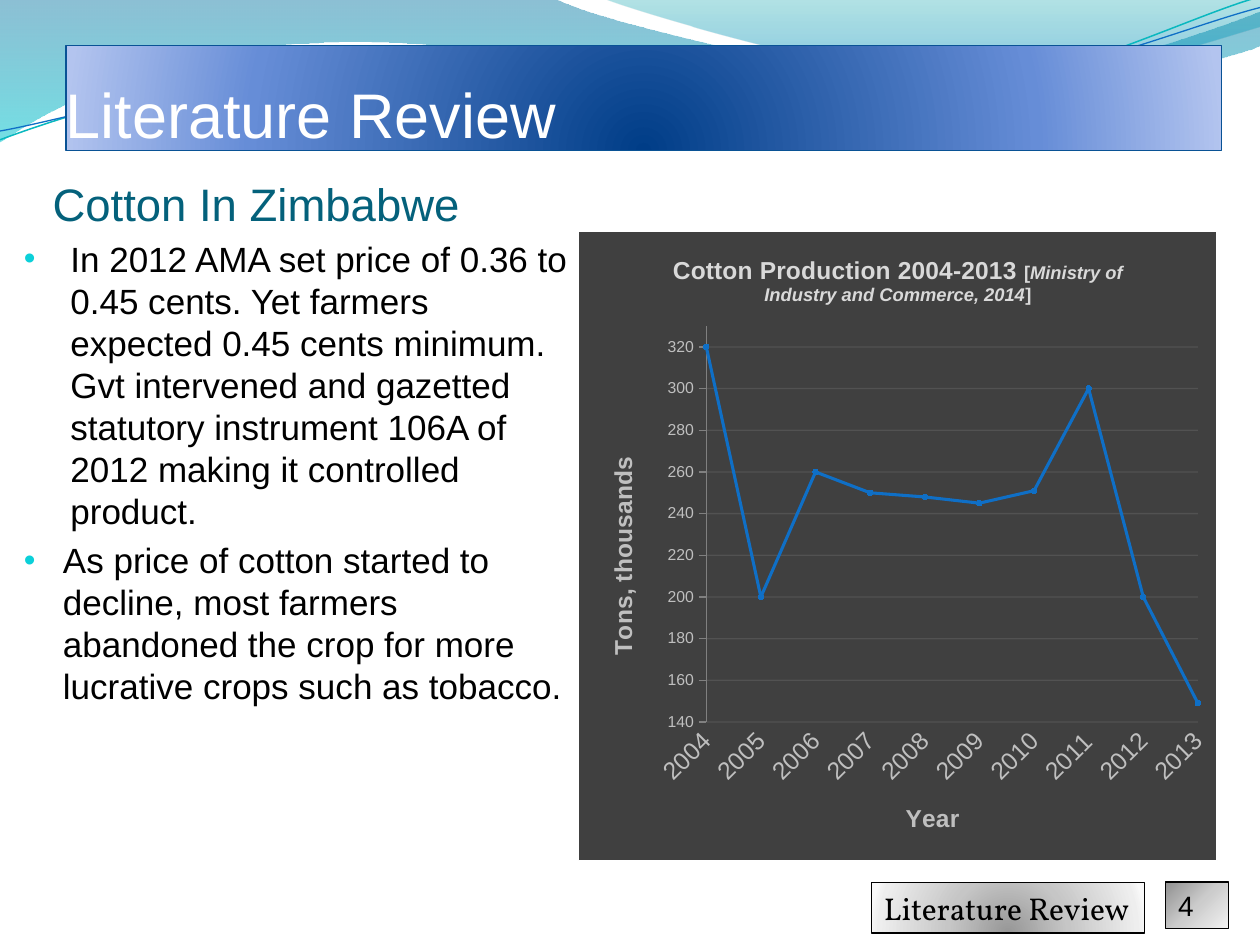
"""Build the Literature Review slide on cotton production in Zimbabwe."""
from lxml.etree import SubElement
from pptx import Presentation
from pptx.chart.data import XyChartData
from pptx.dml.color import RGBColor
from pptx.enum.chart import XL_CHART_TYPE as ChartKind, XL_MARKER_STYLE as Marker, XL_TICK_MARK as Tick
from pptx.enum.shapes import MSO_SHAPE as Preset
from pptx.enum.text import MSO_ANCHOR as Anchor, MSO_AUTO_SIZE as Fit, PP_ALIGN as Align
from pptx.oxml import parse_xml
from pptx.oxml.ns import nsdecls, qn
from pptx.util import Cm, Pt

COLOURS = {
    "black": "000000", "white": "FFFFFF", "heading": "04617B", "bullet": "0BD0D9",
    "banner edge": "095295", "blue": "0F6FC6", "teal": "0AB8BF", "marker": "59AAF2",
    "panel": "404040", "panel title": "D9D9D9", "label": "BFBFBF", "axis": "808080", "grid": "595959",
}
RGB = {name: RGBColor.from_string(value) for name, value in COLOURS.items()}


def style(font, colour, **values):
    font.color.rgb = RGB[colour]
    for name, value in {"name": "Arial", **values}.items():
        setattr(font, name, value)


def shade(shape, stops, focus=None):
    shape.fill.gradient()
    gradient = shape._element.spPr.find(qn("a:gradFill"))
    for child in list(gradient):
        gradient.remove(child)
    stop_list = SubElement(gradient, qn("a:gsLst"))
    for position, colour, alpha in stops:
        stop = SubElement(stop_list, qn("a:gs"), pos=str(position * 1000))
        tint = SubElement(stop, qn("a:srgbClr"), val=colour)
        if alpha < 100:
            SubElement(tint, qn("a:alpha"), val=str(alpha * 1000))
    if focus:
        radial = SubElement(gradient, qn("a:path"), path="circle")
        SubElement(radial, qn("a:fillToRect"), {side: str(share * 1000) for side, share in zip("ltrb", focus)})
    else:
        SubElement(gradient, qn("a:lin"), ang="5400000", scaled="0")


deck = Presentation()
deck.slide_width, deck.slide_height = Cm(25.4), Cm(19.05)
slide = deck.slides.add_slide(deck.slide_layouts[6])

waves = [
    ([(0, 0), (440, -1), (476, 17, 664, 63, 758, 63), (853, 63, 958, 26, 1000, 9),
      (1001, 36), (983, 44, 870, 76, 746, 75), (622, 75, 382, 28, 257, 34),
      (129, 36, 46, 83, -1, 113)], [(0, "0074A1", 45), (100, "00C6CF", 55)], None, 0),
    ([(479, -1), (509, 11, 682, 62, 769, 65), (856, 69, 961, 32, 1000, 21),
      (1000, 0)], [(0, "00A1A9", 30), (80, "008BBF", 45)], None, 0),
    ([(0, 111), (48, 93, 158, 57, 277, 52), (395, 47, 593, 89, 713, 80),
      (833, 71, 938, 15, 998, -2)], None, "teal", 0.85),
    ([(0, 104), (47, 96, 164, 61, 283, 56), (403, 51, 597, 84, 717, 75),
      (836, 67, 941, 21, 1000, 6)], None, "blue", 0.75),
]
for outline, stops, line_colour, weight in waves:
    anchors = [segment[-2:] for segment in outline]
    left, top = map(min, zip(*anchors))
    builder = slide.shapes.build_freeform(*anchors[0], scale=Cm(2.54) / 100)
    builder.add_line_segments(anchors[1:], close=bool(stops))
    wave = builder.convert_to_shape()
    wave.shadow.inherit = False
    for segment, straight in zip(outline[1:], list(wave._element.iter(qn("a:lnTo")))):
        if len(segment) == 6:
            curve = parse_xml(f'<a:cubicBezTo {nsdecls("a")}/>')
            for x, y in zip(segment[::2], segment[1::2]):
                SubElement(curve, qn("a:pt"), x=str(x - left), y=str(y - top))
            straight.getparent().replace(straight, curve)
    if stops:
        shade(wave, stops)
        wave.line.fill.background()
    else:
        wave.fill.background()
        wave.line.color.rgb = RGB[line_colour]
        wave.line.width = Pt(weight)

heading = slide.shapes.add_textbox(Cm(1.06), Cm(1.42), Cm(9.32), Cm(3.23)).text_frame
heading_format = {"word_wrap": True, "vertical_anchor": Anchor.BOTTOM, "margin_left": 0,
                  "margin_right": 0, "margin_bottom": 0}
for name, value in heading_format.items():
    setattr(heading, name, value)
heading_run = heading.paragraphs[0].add_run()
heading_run.text = "Cotton In Zimbabwe"
style(heading_run.font, "heading", size=Pt(26))

findings = slide.shapes.add_textbox(Cm(0.43), Cm(4.66), Cm(11.23), Cm(12.7)).text_frame
for name, value in {"word_wrap": True, "margin_left": Cm(0.05), "margin_right": Cm(0.05)}.items():
    setattr(findings, name, value)
statements = [
    ("In 2012 AMA set price of 0.36 to 0.45 cents. Yet farmers expected 0.45 cents minimum. Gvt intervened "
     "and gazetted statutory instrument 106A of 2012 making it controlled product.", Cm(0.94)),
    ("As price of cotton started to decline, most farmers abandoned the crop for more lucrative crops "
     "such as tobacco.", Cm(0.79)),
]
for index, (statement, indent) in enumerate(statements):
    finding = findings.add_paragraph() if index else findings.paragraphs[0]
    finding.line_spacing, finding.space_before = Pt(24), Pt(4)
    finding_run = finding.add_run()
    finding_run.text = statement
    style(finding_run.font, "black", size=Pt(20))
    properties = finding._p.get_or_add_pPr()
    properties.set("marL", str(indent))
    properties.set("indent", str(-indent))
    SubElement(SubElement(properties, qn("a:buClr")), qn("a:srgbClr"), val=COLOURS["bullet"])
    SubElement(properties, qn("a:buSzPct"), val="95000")
    SubElement(properties, qn("a:buFont"), typeface="Arial")
    SubElement(properties, qn("a:buChar"), char="•")

production = XyChartData()
tons = production.add_series("Series 1")
for year, amount in enumerate([320, 200, 260, 250, 248, 245, 251, 300, 200, 149], 2004):
    tons.add_data_point(year, amount)
chart = slide.shapes.add_chart(ChartKind.XY_SCATTER_LINES, Cm(11.65), Cm(4.66), Cm(12.9), Cm(12.7), production).chart
chart.has_legend = False
style(chart.font, "black", name="Vollkorn", size=Pt(10))
chart._chartSpace.find(qn("c:chart")).addnext(parse_xml(
    f'<c:spPr {nsdecls("c", "a")}><a:solidFill><a:srgbClr val="{COLOURS["panel"]}"/></a:solidFill>'
    f'<a:ln w="9525"><a:solidFill><a:srgbClr val="{COLOURS["white"]}"/></a:solidFill></a:ln></c:spPr>'))

chart.has_title = True
chart.chart_title.include_in_layout = False
caption = chart.chart_title.text_frame.paragraphs[0]
for words, size, slanted in [("Cotton Production 2004-2013 ", 14, False), ("[", 10.5, False),
                             ("Ministry of Industry and Commerce, 2014", 10.5, True), ("]", 10.5, False)]:
    caption_run = caption.add_run()
    caption_run.text = words
    style(caption_run.font, "panel title", size=Pt(size), bold=True, italic=slanted)

years, amounts = chart.category_axis, chart.value_axis
axes = [
    (years, "Year", 14, {"minimum_scale": 2004, "maximum_scale": 2013, "major_unit": 1,
                         "major_tick_mark": Tick.NONE, "has_major_gridlines": False}),
    (amounts, "Tons, thousands", 9, {"minimum_scale": 140, "maximum_scale": 330, "major_unit": 20,
                                     "major_tick_mark": Tick.OUTSIDE, "has_major_gridlines": True}),
]
for axis, label, tick_size, axis_format in axes:
    for name, value in {**axis_format, "minor_tick_mark": Tick.NONE, "has_title": True}.items():
        setattr(axis, name, value)
    for name, value in {"number_format": "General", "number_format_is_linked": False}.items():
        setattr(axis.tick_labels, name, value)
    style(axis.tick_labels.font, "label", size=Pt(tick_size))
    label_run = axis.axis_title.text_frame.paragraphs[0].add_run()
    label_run.text = label
    style(label_run.font, "label", size=Pt(14), bold=True)
years.format.line.fill.background()
years._element.find(qn("c:txPr")).find(qn("a:bodyPr")).set("rot", "-2700000")
amounts.axis_title.text_frame._txBody.bodyPr.set("rot", "-5400000")
for line, colour in [(amounts.format.line, "axis"), (amounts.major_gridlines.format.line, "grid")]:
    line.color.rgb = RGB[colour]
    line.width = Pt(0.75)
grid_colour = amounts._element.find(qn("c:majorGridlines")).find(".//" + qn("a:srgbClr"))
SubElement(grid_colour, qn("a:alpha"), val="75000")

plot_area = chart._chartSpace.find(".//" + qn("c:plotArea"))
for old_layout in plot_area.findall(qn("c:layout")):
    plot_area.remove(old_layout)
layout = parse_xml(f'<c:layout {nsdecls("c")}><c:manualLayout/></c:layout>')
for name, value in {"layoutTarget": "inner", "xMode": "edge", "yMode": "edge",
                    "x": 0.2, "y": 0.15, "w": 0.77, "h": 0.63}.items():
    SubElement(layout[0], qn("c:" + name), val=str(value))
plot_area.insert(0, layout)

trend = chart.plots[0].series[0]
trend.smooth = False
trend.format.line.color.rgb = RGB["blue"]
trend.format.line.width = Pt(1.75)
trend.marker.style, trend.marker.size = Marker.CIRCLE, 3
trend.marker.format.fill.solid()
trend.marker.format.fill.fore_color.rgb = RGB["marker"]
trend.marker.format.line.color.rgb = RGB["blue"]

below = (50, 130, 50, -30)
labels = [
    ("Literature Review", (1.33, 0.92, 23.29, 2.12), [(0, "003D87", 100), (68, "668DD7", 100), (100, "B3C4EF", 100)],
     below, "banner edge", "white", {"size": Pt(36)}, heading_format),
    ("Literature Review", (17.57, 17.79, 5.51, 1.02),
     [(0, "979797", 100), (43, "C6C6C6", 100), (93, "EEEEEE", 100), (100, "F9F9F9", 100)], below, "black", "black",
     {"size": Pt(18), "name": "Vollkorn"},
     {"word_wrap": False, "vertical_anchor": Anchor.TOP, "auto_size": Fit.SHAPE_TO_FIT_TEXT}),
    ("4", (23.5, 17.78, 1.27, 0.94), [(0, "909090", 100), (50, "CCCCCC", 100), (100, "F2F2F2", 100)],
     (0, 0, 100, 100), "black", "black", {"size": Pt(16)},
     {"word_wrap": True, "vertical_anchor": Anchor.TOP, "auto_size": Fit.SHAPE_TO_FIT_TEXT}),
]
for words, place, stops, focus, edge, ink, font_format, frame_format in labels:
    plate = slide.shapes.add_shape(Preset.RECTANGLE, *map(Cm, place))
    plate.shadow.inherit = False
    shade(plate, stops, focus)
    plate.line.color.rgb, plate.line.width = RGB[edge], Pt(0.75)
    for name, value in frame_format.items():
        setattr(plate.text_frame, name, value)
    plate_line = plate.text_frame.paragraphs[0]
    plate_line.alignment = Align.LEFT
    plate_run = plate_line.add_run()
    plate_run.text = words
    style(plate_run.font, ink, **font_format)

deck.save("out.pptx")
